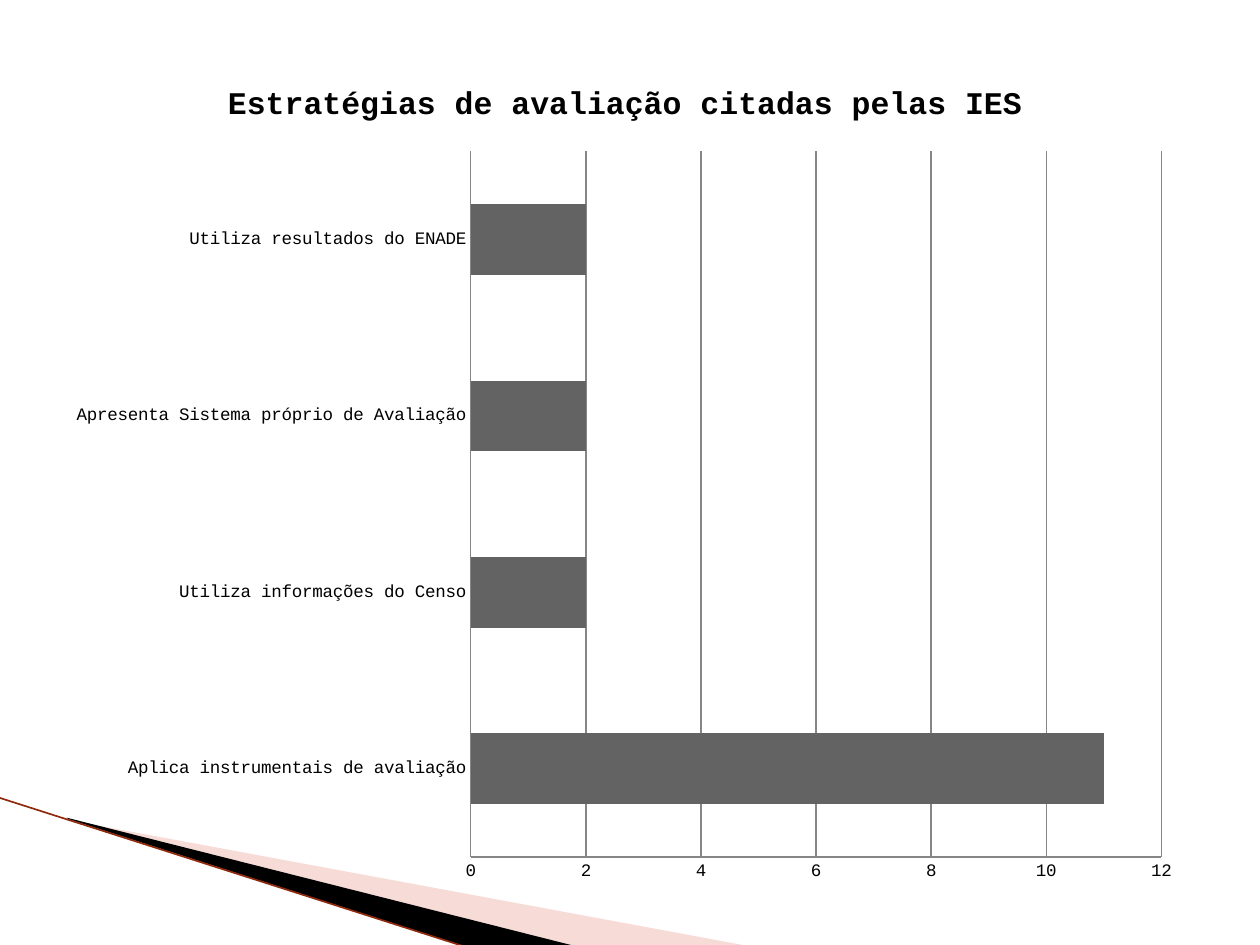
import pptx
import pptx.chart.data
import pptx.dml.color
import pptx.enum.chart
import pptx.oxml
import pptx.oxml.ns
import pptx.util
from pptx.util import Inches

FONT = "Courier New"
TITLE = "Estratégias de avaliação citadas pelas IES"
STRATEGIES = {
    "Aplica instrumentais de avaliação": 11,
    "Utiliza informações do Censo": 2,
    "Apresenta Sistema próprio de Avaliação": 2,
    "Utiliza resultados do ENADE": 2,
}


def rgb(color):
    return pptx.dml.color.RGBColor.from_string(color)


def set_fill(fill, color):
    fill.solid()
    fill.fore_color.rgb = rgb(color)


def set_font(font, size, bold=False):
    font.name = FONT
    font.size = pptx.util.Pt(size)
    font.bold = bold
    font.color.rgb = rgb("000000")


def add_wedge(slide, points, color, alpha=None):
    """Add a filled polygon; alpha is its opacity in percent."""
    points = [(Inches(x), Inches(y)) for x, y in points]
    builder = slide.shapes.build_freeform(*points[0])
    builder.add_line_segments(points[1:])
    s = builder.convert_to_shape()
    s.shadow.inherit = False
    set_fill(s.fill, color)
    s.line.fill.background()
    if alpha is not None:
        clr = s.fill._xPr.find(".//" + pptx.oxml.ns.qn("a:srgbClr"))
        pptx.oxml.ns  # namespace helpers
        child = pptx.oxml.parse_xml(
            f'<a:alpha {pptx.oxml.ns.nsdecls("a")} val="{alpha * 1000}"/>')
        clr.append(child)


def add_line(slide, start, end, color, width):
    line = slide.shapes.add_connector(
        pptx.enum.shapes.MSO_CONNECTOR.STRAIGHT,
        *(Inches(v) for v in start + end))
    line.line.color.rgb = rgb(color)
    line.line.width = pptx.util.Pt(width)
    line._element.spPr.append(pptx.oxml.parse_xml(
        f'<a:effectLst {pptx.oxml.ns.nsdecls("a")}/>'))


def set_plot_area(chart, x, y, w, h):
    """Place the inner plot area, in fractions of the chart."""
    plot_area = chart._chartSpace.chart.plotArea
    for old in plot_area.findall(pptx.oxml.ns.qn("c:layout")):
        plot_area.remove(old)
    plot_area.insert(0, pptx.oxml.parse_xml(
        f'<c:layout {pptx.oxml.ns.nsdecls("c")}><c:manualLayout>'
        '<c:layoutTarget val="inner"/><c:xMode val="edge"/><c:yMode val="edge"/>'
        f'<c:x val="{x}"/><c:y val="{y}"/><c:w val="{w}"/><c:h val="{h}"/>'
        '</c:manualLayout></c:layout>'))


def style_axis(axis):
    axis.major_tick_mark = pptx.enum.chart.XL_TICK_MARK.NONE
    axis.minor_tick_mark = pptx.enum.chart.XL_TICK_MARK.NONE
    axis.format.line.color.rgb = rgb("868686")
    axis.format.line.width = pptx.util.Pt(0.75)
    set_font(axis.tick_labels.font, 10)


def add_strategy_chart(slide):
    data = pptx.chart.data.CategoryChartData()
    data.categories = list(STRATEGIES)
    data.add_series("Series 1", list(STRATEGIES.values()))
    chart = slide.shapes.add_chart(
        pptx.enum.chart.XL_CHART_TYPE.BAR_CLUSTERED,
        Inches(0.43), Inches(0.44), Inches(9.06), Inches(6.69), data).chart
    set_font(chart.font, 10)
    chart.has_legend = False
    chart.has_title = True
    chart.chart_title.include_in_layout = False
    p = chart.chart_title.text_frame.paragraphs[0]
    p.text = TITLE
    set_font(p.font, 18, bold=True)

    style_axis(chart.category_axis)
    axis = chart.value_axis
    style_axis(axis)
    axis.minimum_scale, axis.maximum_scale, axis.major_unit = 0, 12, 2
    axis.has_major_gridlines = True
    axis.major_gridlines.format.line.color.rgb = rgb("868686")
    axis.major_gridlines.format.line.width = pptx.util.Pt(0.75)

    plot = chart.plots[0]
    plot.gap_width = 150
    plot.vary_by_categories = False
    set_fill(plot.series[0].format.fill, "636363")
    set_plot_area(chart, 0.365, 0.114, 0.605, 0.837)


def main():
    prs = pptx.Presentation()
    prs.slide_width, prs.slide_height = Inches(10), Inches(7.5)
    slide = prs.slides.add_slide(prs.slide_layouts[6])
    add_wedge(slide, [(0.55, 6.51), (5.95, 7.51), (4.56, 7.51), (0.55, 6.5)],
              "E9A59D", alpha=40)
    add_wedge(slide, [(0.53, 6.49), (4.57, 7.51), (3.72, 7.52), (0.54, 6.5)],
              "000000")
    add_line(slide, (-0.01, 6.33), (3.71, 7.52), "8F2B0C", 0.95)
    add_strategy_chart(slide)
    prs.save("out.pptx")


if __name__ == "__main__":
    main()
